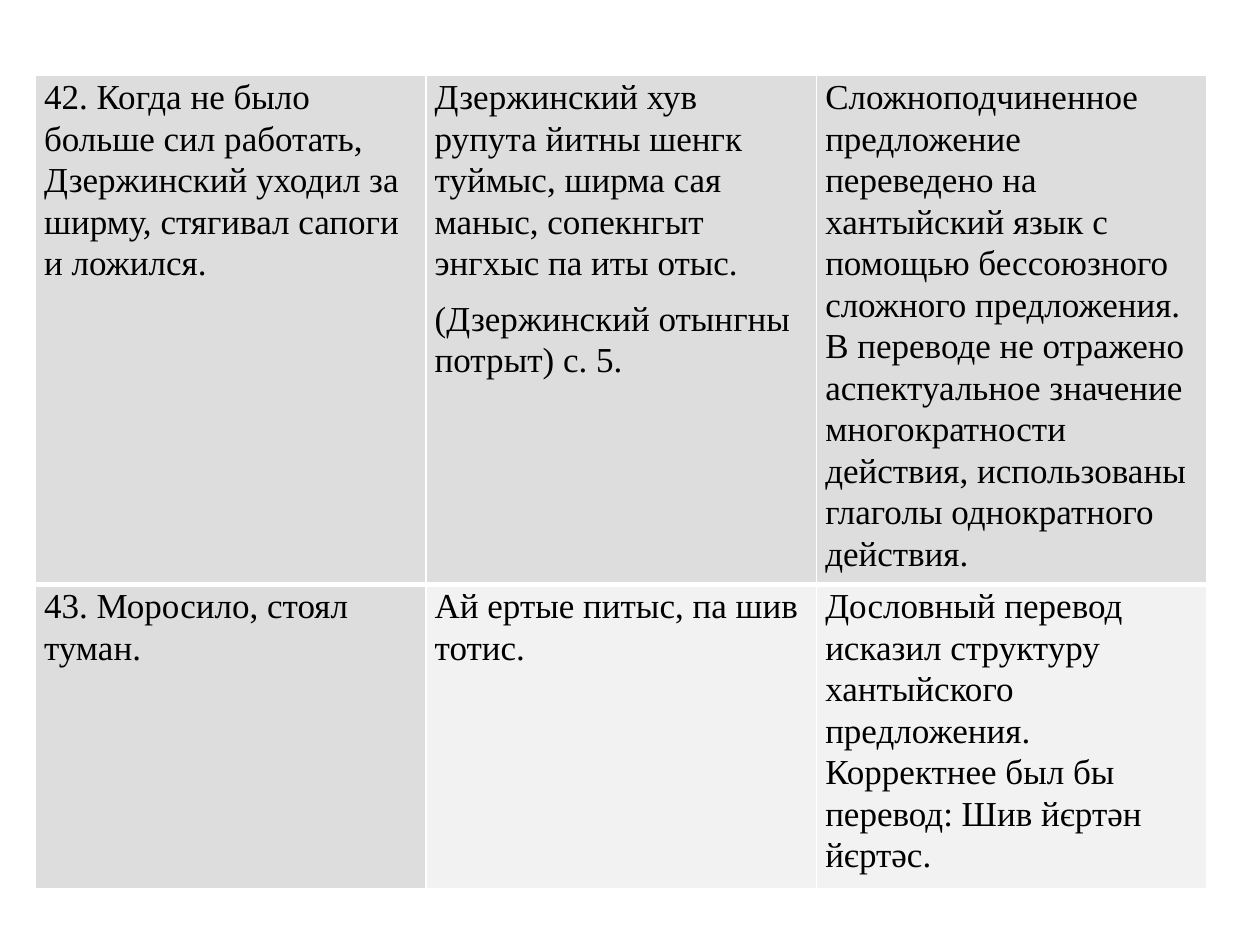
from lxml.etree import SubElement
from pptx import Presentation
from pptx.dml.color import RGBColor
from pptx.oxml.ns import qn
from pptx.util import Inches, Pt

HEADER_GREY = "DDDDDD"
BODY_GREY = "F2F2F2"
COLUMN_WIDTH = 3.1
ROW_HEIGHTS = [4.04, 2.41]
THIN, THICK = 1, 3

EXAMPLES = [
    [
        ["42. Когда не было больше сил работать, Дзержинский уходил за ширму, "
         "стягивал сапоги и ложился."],
        ["Дзержинский хув рупута йитны шенгк туймыс, ширма сая маныс, "
         "сопекнгыт энгхыс па иты отыс.",
         "(Дзержинский отынгны потрыт) с. 5."],
        ["Сложноподчиненное предложение переведено на хантыйский язык с помощью "
         "бессоюзного сложного предложения. В переводе не отражено аспектуальное "
         "значение многократности действия, использованы глаголы однократного "
         "действия."],
    ],
    [
        ["43. Моросило, стоял туман."],
        ["Ай ертые питыс, па шив тотис."],
        ["Дословный перевод исказил структуру хантыйского предложения. "
         "Корректнее был бы перевод: Шив йєртән йєртәс."],
    ],
]

CELL_MARGINS = {
    "margin_left": Inches(0.07),
    "margin_right": Inches(0.07),
    "margin_top": 0,
    "margin_bottom": 0,
}
PARAGRAPH_FORMAT = {"line_spacing": 1.07, "space_after": Pt(8)}
FONT_FORMAT = {"name": "Times New Roman", "size": Pt(20), "bold": False}


def color(value):
    return RGBColor.from_string(value)


def apply_format(target, values):
    for name, value in values.items():
        setattr(target, name, value)


def add_borders(cell, widths):
    properties = cell._tc.get_or_add_tcPr()
    for side, width in widths.items():
        border = SubElement(properties, qn(f"a:ln{side}"), w=str(Pt(width)))
        fill = SubElement(border, qn("a:solidFill"))
        SubElement(fill, qn("a:srgbClr"), val="FFFFFF")


def write_paragraphs(frame, texts):
    for index, text in enumerate(texts):
        paragraph = frame.add_paragraph() if index else frame.paragraphs[0]
        run = paragraph.add_run()
        run.text = text
        apply_format(paragraph, PARAGRAPH_FORMAT)
        apply_format(run.font, FONT_FORMAT)
        run.font.color.rgb = color("000000")


def fill_cell(cell, texts, background, borders):
    apply_format(cell, CELL_MARGINS)
    add_borders(cell, borders)
    cell.fill.solid()
    cell.fill.fore_color.rgb = color(background)
    write_paragraphs(cell.text_frame, texts)


def add_translation_table(slide):
    column_count = len(EXAMPLES[0])
    table = slide.shapes.add_table(
        len(EXAMPLES), column_count, Inches(0.28), Inches(0.6),
        Inches(COLUMN_WIDTH * column_count), Inches(sum(ROW_HEIGHTS)),
    ).table
    for column in table.columns:
        column.width = Inches(COLUMN_WIDTH)
    for row_index, (example, height) in enumerate(zip(EXAMPLES, ROW_HEIGHTS)):
        table.rows[row_index].height = Inches(height)
        is_first = row_index == 0
        borders = {
            "L": THIN,
            "R": THIN,
            "T": THIN if is_first else THICK,
            "B": THICK if is_first else THIN,
        }
        for column_index, texts in enumerate(example):
            is_header = is_first or column_index == 0
            background = HEADER_GREY if is_header else BODY_GREY
            fill_cell(table.cell(row_index, column_index), texts, background, borders)


def main():
    presentation = Presentation()
    presentation.slide_width = Inches(10)
    presentation.slide_height = Inches(7.5)
    slide = presentation.slides.add_slide(presentation.slide_layouts[6])
    add_translation_table(slide)
    presentation.save("out.pptx")


if __name__ == "__main__":
    main()
